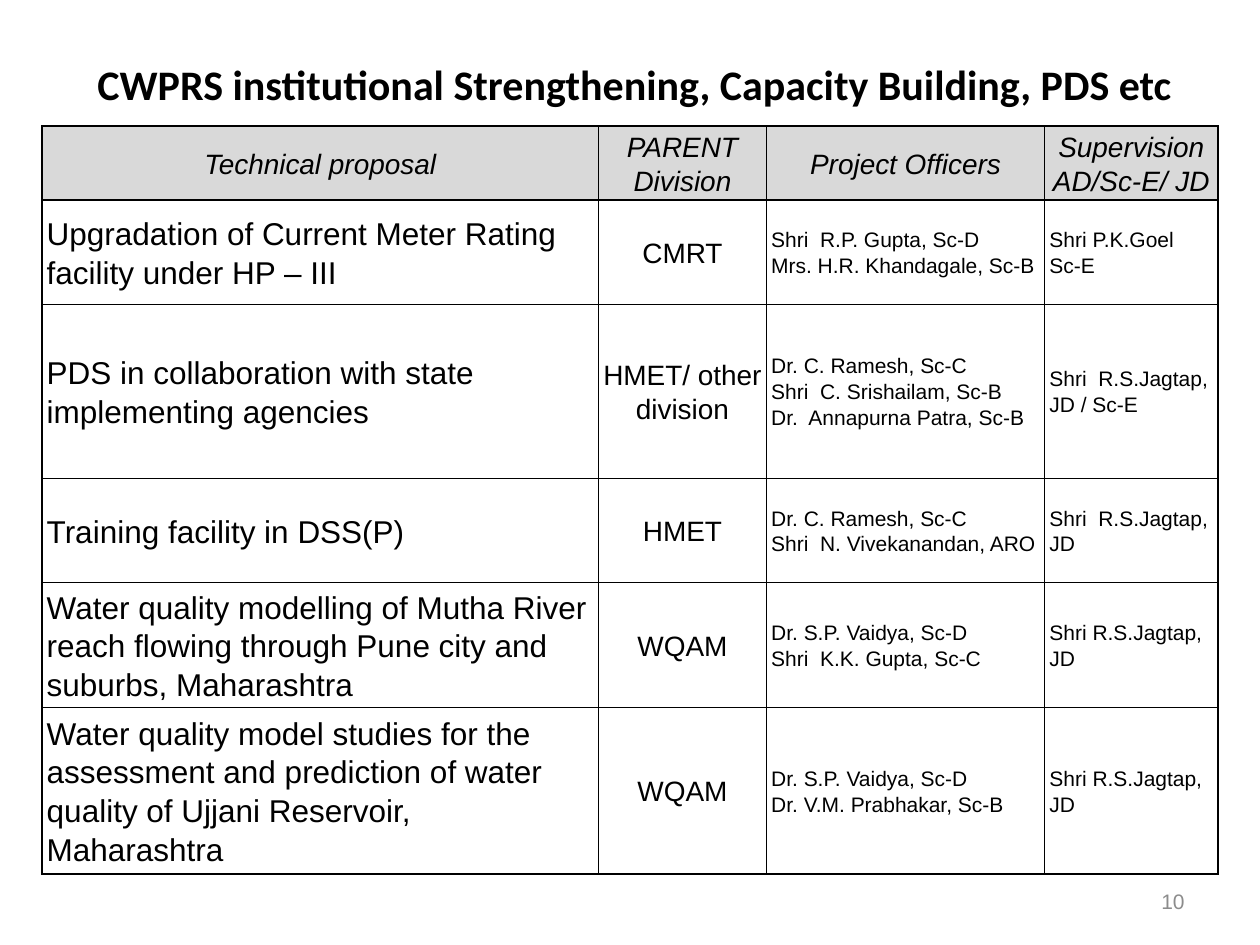
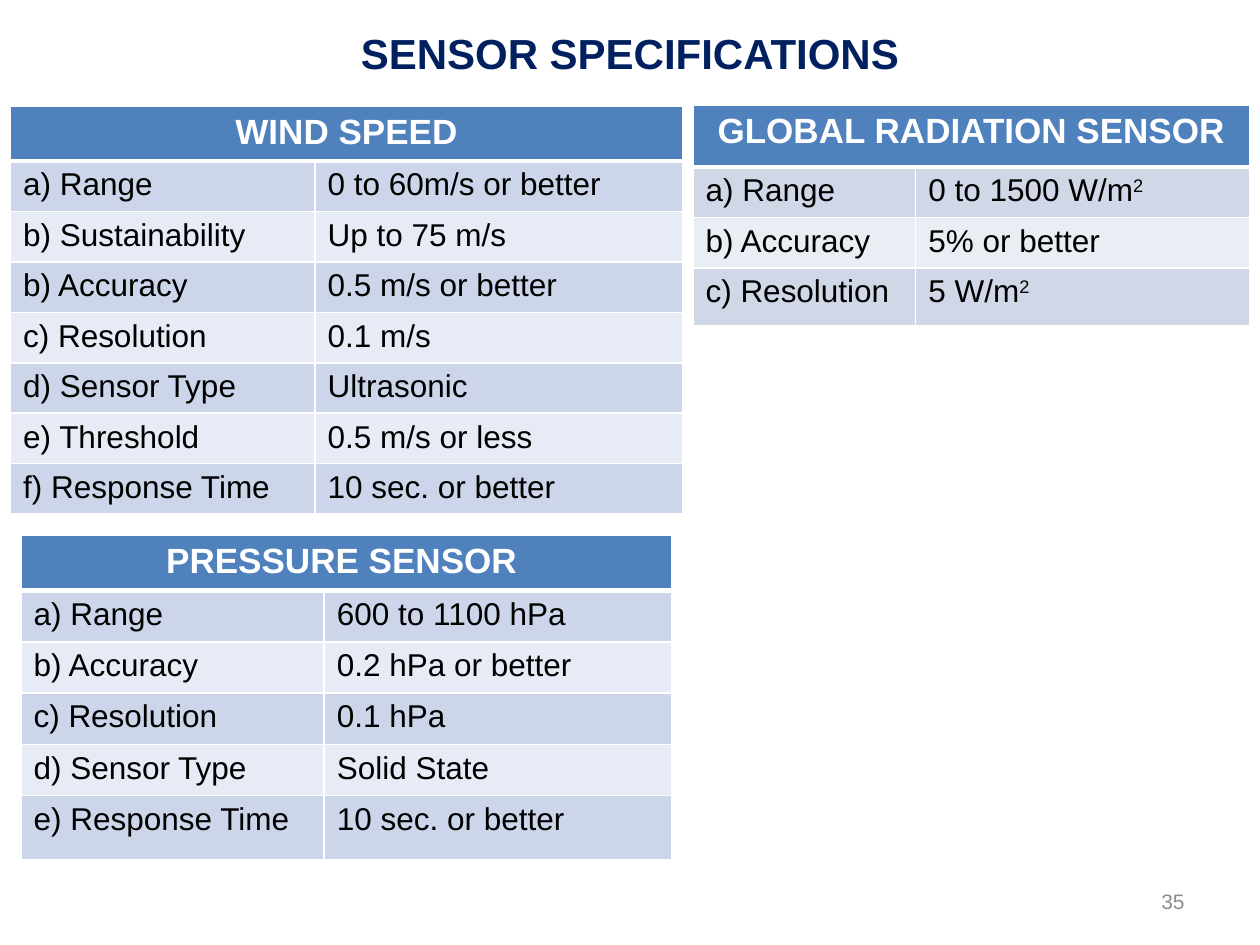
from lxml import etree
from pptx import Presentation
from pptx.dml.color import RGBColor
from pptx.enum.text import MSO_ANCHOR, PP_ALIGN
from pptx.oxml.ns import qn
from pptx.util import Pt

LEFT, CENTER, RIGHT = PP_ALIGN.LEFT, PP_ALIGN.CENTER, PP_ALIGN.RIGHT
TOP, MIDDLE = MSO_ANCHOR.TOP, MSO_ANCHOR.MIDDLE

COLORS = {
    "black": "000000", "white": "FFFFFF", "navy": "002060", "gray": "8C8C8C",
    "silver": "D9D9D9", "blue": "4F81BD",
    "mist": "CCD5EA", "pale_mist": "E7EBF5",
    "steel": "D0D8E8", "pale_steel": "E9EDF4",
}
BODY_FONT = "Arial"
SUPERSCRIPT_MARK = "^"


class Deck:
    def __init__(self):
        self.prs = Presentation()
        self.prs.slide_width, self.prs.slide_height = Pt(720), Pt(540)
        self.slide = None

    def new_slide(self, number):
        self.slide = self.prs.slides.add_slide(self.prs.slide_layouts[6])
        self.text_box(516, 500.5, 168, 28.5, str(number), 12, "gray", align=RIGHT)

    def add_lines(self, frame, lines, size, color, align=LEFT, font=BODY_FONT,
                  bold=False, italic=False, spacing=None):
        for index, line in enumerate(lines):
            paragraph = frame.paragraphs[0] if index == 0 else frame.add_paragraph()
            paragraph.alignment = align
            if spacing:
                paragraph.line_spacing = spacing
            for position, part in enumerate(line.split(SUPERSCRIPT_MARK)):
                run = paragraph.add_run()
                run.text = part
                run.font.name, run.font.size = font, Pt(size)
                run.font.bold, run.font.italic = bold, italic
                run.font.color.rgb = RGBColor.from_string(COLORS[color])
                if position:
                    run.font._element.set("baseline", "30000")

    def text_box(self, left, top, width, height, text, size, color, **style):
        box = self.slide.shapes.add_textbox(Pt(left), Pt(top), Pt(width), Pt(height))
        frame = box.text_frame
        frame.word_wrap = True
        frame.vertical_anchor = MIDDLE
        self.add_lines(frame, [text], size, color, **style)

    def title(self, top, height, text, color, font=BODY_FONT):
        self.text_box(36, top, 648, height, text, 24, color,
                      align=CENTER, font=font, bold=True)

    def grid(self, left, top, widths, heights):
        table = self.slide.shapes.add_table(
            len(heights), len(widths), Pt(left), Pt(top),
            Pt(sum(widths)), Pt(sum(heights))).table
        table.first_row = table.horz_banding = False
        for column, width in zip(table.columns, widths):
            column.width = Pt(width)
        for row, height in zip(table.rows, heights):
            row.height = Pt(height)
        return table

    def paint(self, cell, fill, border, top=1, bottom=1, anchor=TOP, margins=None):
        properties = cell._tc.get_or_add_tcPr()
        for side, width in (("L", 1), ("R", 1), ("T", top), ("B", bottom)):
            line = etree.SubElement(properties, qn(f"a:ln{side}"), w=str(Pt(width)))
            solid = etree.SubElement(line, qn("a:solidFill"))
            etree.SubElement(solid, qn("a:srgbClr"), val=COLORS[border])
        cell.fill.solid()
        cell.fill.fore_color.rgb = RGBColor.from_string(COLORS[fill])
        cell.vertical_anchor = anchor
        if margins:
            cell.margin_left = cell.margin_right = Pt(margins[0])
            cell.margin_top = cell.margin_bottom = Pt(margins[1])

    def proposal_table(self, left, top, widths, heights, header, proposals):
        table = self.grid(left, top, widths, heights)
        column_styles = ((18, LEFT), (16, CENTER), (12, LEFT), (12, LEFT))
        for r, row in enumerate([header, *proposals]):
            is_header = r == 0
            for c, (text, (size, align)) in enumerate(zip(row, column_styles)):
                cell = table.cell(r, c)
                self.paint(cell, "silver" if is_header else "white", "black",
                           anchor=MIDDLE, margins=(2.7, 0))
                if is_header:
                    size, align = 16, CENTER
                self.add_lines(cell.text_frame, text.split("\n"), size, "black",
                               align=align, italic=is_header, spacing=1.1)

    def sensor_table(self, left, top, widths, heights, sensor, specs, bands):
        table = self.grid(left, top, widths, heights)
        for c in range(len(widths)):
            self.paint(table.cell(0, c), "blue", "white", bottom=3)
        table.cell(0, 0).merge(table.cell(0, len(widths) - 1))
        self.add_lines(table.cell(0, 0).text_frame, [sensor], 20, "white",
                       align=CENTER, bold=True)
        for r, spec in enumerate(specs, 1):
            for c, text in enumerate(spec):
                cell = table.cell(r, c)
                self.paint(cell, bands[(r - 1) % 2], "white", top=3 if r == 1 else 1)
                self.add_lines(cell.text_frame, [text], 18, "black")


def strengthening_slide(deck):
    deck.new_slide(10)
    deck.title(30, 36, " CWPRS institutional Strengthening, Capacity Building, PDS etc",
               "black", "Calibri")
    deck.proposal_table(
        24, 72, (318, 96, 159, 99), (39.7, 59.7, 99.4, 59.7, 59.7, 59.7),
        ("Technical proposal", "PARENT Division", "Project Officers",
         "Supervision\nAD/Sc-E/ JD"),
        [
            ("Upgradation of Current Meter Rating facility under HP – III", "CMRT",
             "Shri  R.P. Gupta, Sc-D\nMrs. H.R. Khandagale, Sc-B",
             "Shri P.K.Goel\nSc-E"),
            ("PDS in collaboration with state implementing agencies",
             "HMET/ other division",
             "Dr. C. Ramesh, Sc-C\nShri  C. Srishailam, Sc-B\n"
             "Dr.  Annapurna Patra, Sc-B",
             "Shri  R.S.Jagtap, JD / Sc-E"),
            ("Training facility in DSS(P)", "HMET",
             "Dr. C. Ramesh, Sc-C\nShri  N. Vivekanandan, ARO",
             "Shri  R.S.Jagtap, JD"),
            ("Water quality modelling of Mutha River reach flowing through "
             "Pune city and suburbs, Maharashtra", "WQAM",
             "Dr. S.P. Vaidya, Sc-D\nShri  K.K. Gupta, Sc-C",
             "Shri R.S.Jagtap, JD"),
            ("Water quality model studies for the assessment and prediction of "
             "water quality of Ujjani Reservoir, Maharashtra", "WQAM",
             "Dr. S.P. Vaidya, Sc-D\nDr. V.M. Prabhakar, Sc-B",
             "Shri R.S.Jagtap, JD"),
        ])


def sensor_slide(deck):
    deck.new_slide(35)
    deck.title(0, 60, "SENSOR SPECIFICATIONS", "navy")
    mist = ("mist", "pale_mist")
    deck.sensor_table(
        6, 60.75, (174, 210), (30, *[27.7] * 6, 28.5), "WIND SPEED",
        [
            ("a) Range", "0 to 60m/s or better"),
            ("b) Sustainability", "Up to 75 m/s"),
            ("b) Accuracy", "0.5 m/s or better"),
            ("c) Resolution", "0.1 m/s"),
            ("d) Sensor Type", "Ultrasonic"),
            ("e) Threshold", "0.5 m/s or less"),
            ("f) Response Time", "10 sec. or better"),
        ], mist)
    deck.sensor_table(
        396, 60, (127.3, 190.7), (35.5, 27.5, 27.5, 33), "GLOBAL RADIATION SENSOR",
        [
            ("a) Range", "0 to 1500 W/m^2"),
            ("b) Accuracy", "5% or better"),
            ("c) Resolution", "5 W/m^2"),
        ], ("steel", "pale_steel"))
    deck.sensor_table(
        12, 306, (173.3, 198.7), (31.5, *[29.3] * 4, 36.5), "PRESSURE SENSOR ",
        [
            ("a) Range", "600 to 1100 hPa"),
            ("b) Accuracy", "0.2 hPa or better"),
            ("c) Resolution", "0.1 hPa"),
            ("d) Sensor Type", "Solid State"),
            ("e) Response Time", "10 sec. or better"),
        ], mist)


def main():
    deck = Deck()
    strengthening_slide(deck)
    sensor_slide(deck)
    deck.prs.save("out.pptx")


if __name__ == "__main__":
    main()
